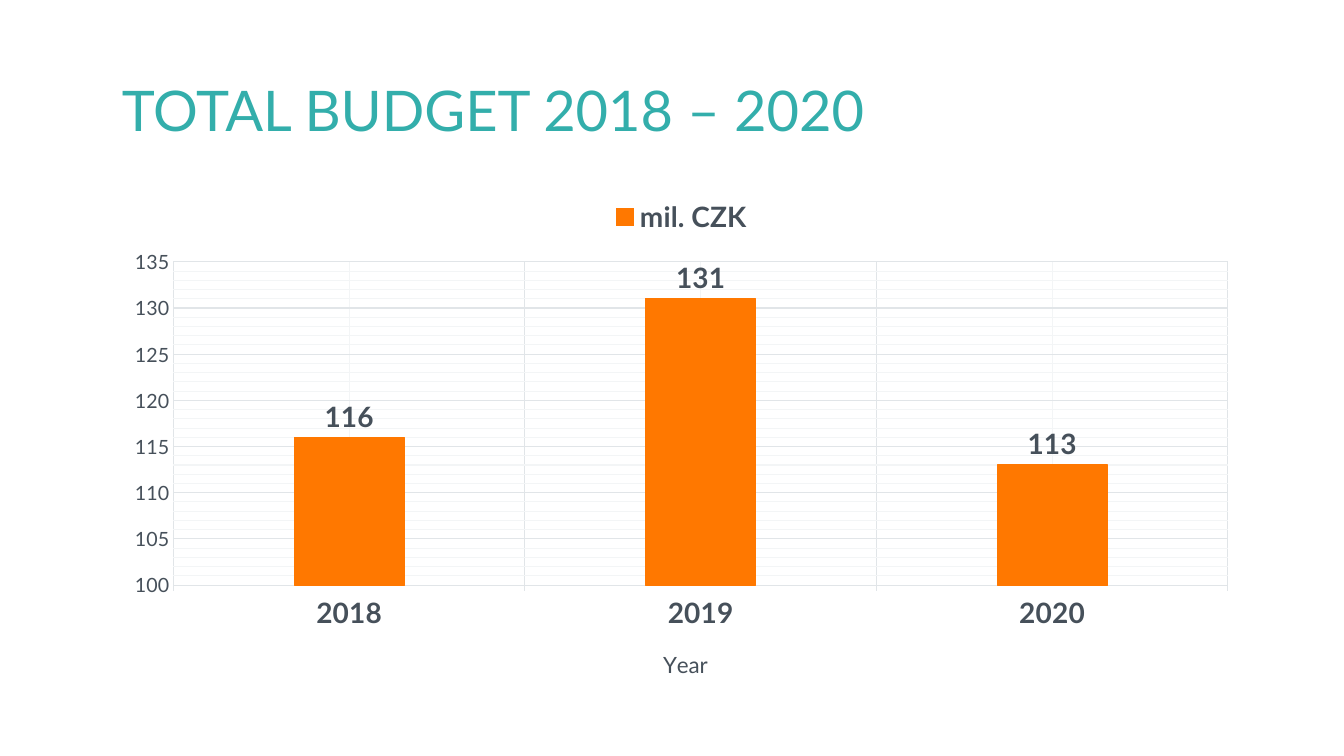
from dataclasses import dataclass

from lxml.etree import SubElement
from pptx import Presentation
from pptx.chart.data import CategoryChartData
from pptx.dml.color import RGBColor
from pptx.enum.chart import XL_CHART_TYPE, XL_LABEL_POSITION, XL_LEGEND_POSITION, XL_TICK_MARK
from pptx.enum.text import MSO_ANCHOR, MSO_AUTO_SIZE, PP_ALIGN
from pptx.oxml import parse_xml
from pptx.oxml.ns import nsdecls, qn
from pptx.util import Cm, Pt


@dataclass(frozen=True)
class Theme:
    font: str = "Lato"
    teal: RGBColor = RGBColor(0x33, 0xAE, 0xAB)
    slate: RGBColor = RGBColor(0x46, 0x50, 0x5A)
    orange: RGBColor = RGBColor(0xFF, 0x78, 0x00)
    grid: RGBColor = RGBColor(0xE1, 0xE5, 0xE8)
    minor_grid: RGBColor = RGBColor(0xF3, 0xF5, 0xF6)
    title_size: int = 40
    emphasis_size: int = 20
    axis_title_size: int = 16
    tick_size: int = 14
    base_size: int = 10


THEME = Theme()
LEFT, WIDTH = Cm(2.82), Cm(28.73)
LINE_WIDTH = Pt(0.75)


def set_font(font, size, color=THEME.slate, bold=False):
    font.name = THEME.font
    font.size = Pt(size)
    font.bold = bold
    font.color.rgb = color


def set_line(line, color):
    line.color.rgb = color
    line.width = LINE_WIDTH


def set_layout(parent, index, **values):
    """Give a chart part a manual layout, as fractions of the chart."""
    for existing in parent.findall(qn("c:layout")):
        parent.remove(existing)
    layout = parse_xml(f'<c:layout {nsdecls("c")}><c:manualLayout/></c:layout>')
    for name, value in values.items():
        SubElement(layout[0], qn(f"c:{name}")).set("val", str(value))
    parent.insert(index, layout)


def add_title(slide, text):
    title = slide.shapes.title
    title.left, title.top, title.width, title.height = LEFT, Cm(1.02), WIDTH, Cm(3.68)
    frame = title.text_frame
    frame.text = text
    frame.word_wrap = True
    frame.auto_size = MSO_AUTO_SIZE.NONE
    frame.vertical_anchor = MSO_ANCHOR.MIDDLE
    paragraph = frame.paragraphs[0]
    paragraph.alignment = PP_ALIGN.LEFT
    paragraph.line_spacing = 0.9
    set_font(paragraph.font, THEME.title_size, THEME.teal)


def add_minor_gridlines(axis):
    axis.has_minor_gridlines = True
    gridlines = axis._element.find(qn("c:minorGridlines"))
    gridlines.append(parse_xml(
        f'<c:spPr {nsdecls("c", "a")}><a:ln w="{LINE_WIDTH}"><a:solidFill>'
        f'<a:srgbClr val="{THEME.minor_grid}"/></a:solidFill></a:ln></c:spPr>'
    ))


def style_axis(axis, size, bold=False):
    set_font(axis.tick_labels.font, size, bold=bold)
    axis.has_major_gridlines = True
    set_line(axis.major_gridlines.format.line, THEME.grid)
    add_minor_gridlines(axis)
    axis.minor_tick_mark = XL_TICK_MARK.NONE


def add_axis_title(axis, text):
    axis_title = axis.axis_title
    axis_title.text_frame.text = text
    set_font(axis_title.text_frame.paragraphs[0].font, THEME.axis_title_size)
    set_layout(axis_title._element, 1, xMode="edge", yMode="edge", x=0.48, y=0.9)


def add_budget_chart(slide, years, name, amounts):
    data = CategoryChartData()
    data.categories = years
    data.add_series(name, amounts)
    chart = slide.shapes.add_chart(
        XL_CHART_TYPE.COLUMN_CLUSTERED, LEFT, Cm(4.7), WIDTH, Cm(12.83), data
    ).chart
    set_font(chart.font, THEME.base_size)
    chart.has_title = False
    set_layout(chart._chartSpace.chart.plotArea, 0, layoutTarget="inner",
               xMode="edge", yMode="edge", x=0.054, y=0.148, w=0.925, h=0.635)

    # Legend
    chart.has_legend = True
    chart.legend.position = XL_LEGEND_POSITION.TOP
    chart.legend.include_in_layout = False
    set_font(chart.legend.font, THEME.emphasis_size, bold=True)

    # Axes
    year_axis, amount_axis = chart.category_axis, chart.value_axis
    style_axis(year_axis, THEME.emphasis_size, bold=True)
    year_axis.major_tick_mark = XL_TICK_MARK.OUTSIDE
    set_line(year_axis.format.line, THEME.grid)
    add_axis_title(year_axis, "Year")
    style_axis(amount_axis, THEME.tick_size)
    amount_axis.major_tick_mark = XL_TICK_MARK.NONE
    amount_axis.format.line.fill.background()
    amount_axis.minimum_scale, amount_axis.maximum_scale = 100, 135
    amount_axis.major_unit, amount_axis.minor_unit = 5, 1

    # Columns and their values
    plot = chart.plots[0]
    plot.vary_by_categories = False
    plot.gap_width, plot.overlap = 219, -27
    series = plot.series[0]
    series.format.fill.solid()
    series.format.fill.fore_color.rgb = THEME.orange
    set_line(series.format.line, THEME.orange)
    labels = series.data_labels
    labels.show_value = True
    labels.position = XL_LABEL_POSITION.OUTSIDE_END
    set_font(labels.font, THEME.emphasis_size, bold=True)


def main():
    presentation = Presentation()
    presentation.slide_width, presentation.slide_height = Cm(33.87), Cm(19.05)
    slide = presentation.slides.add_slide(presentation.slide_layouts.get_by_name("Title Only"))
    add_title(slide, "TOTAL BUDGET 2018 – 2020")
    add_budget_chart(slide, ("2018", "2019", "2020"), "mil. CZK", (116, 131, 113))
    presentation.save("out.pptx")


if __name__ == "__main__":
    main()
